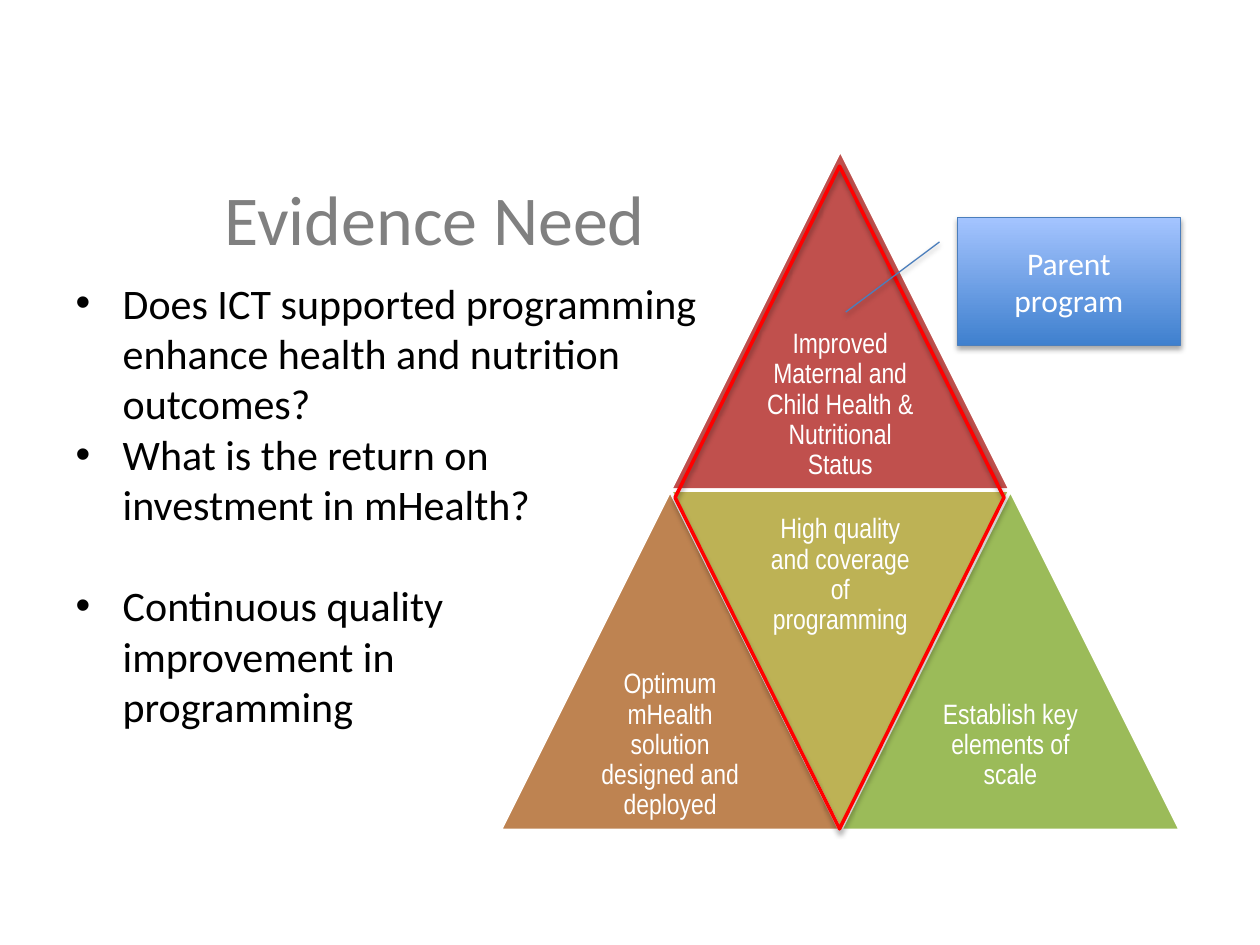
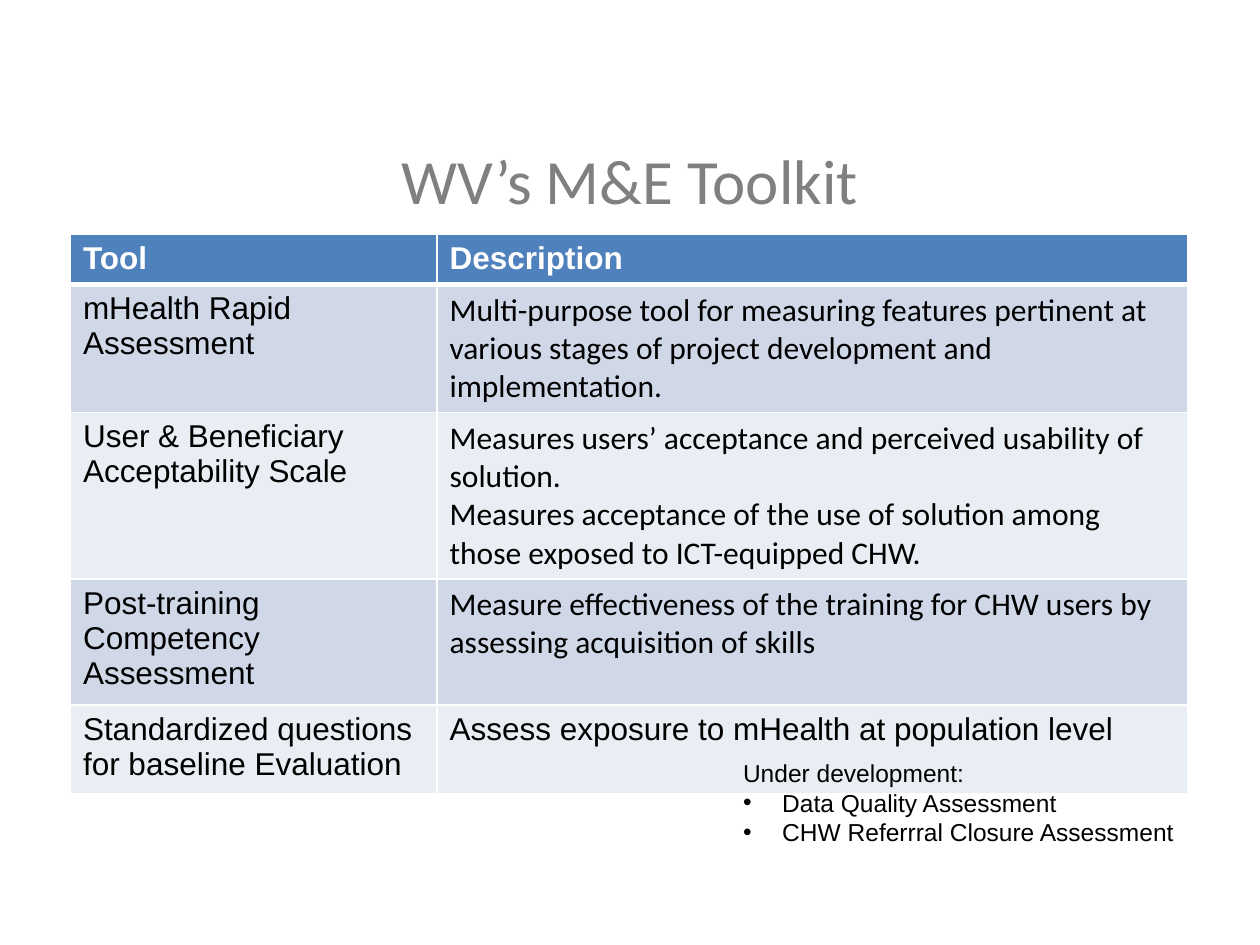
from copy import deepcopy
from dataclasses import dataclass

from pptx import Presentation
from pptx.dml.color import RGBColor
from pptx.enum.shapes import MSO_SHAPE
from pptx.enum.text import MSO_ANCHOR, MSO_AUTO_SIZE, PP_ALIGN
from pptx.oxml import parse_xml
from pptx.oxml.ns import nsdecls, qn
from pptx.util import Cm, Pt


@dataclass(frozen=True)
class Theme:
    font: str = "Calibri"
    table_font: str = "Arial"
    pyramid_font: str = "Arial Narrow"
    title: str = "808080"
    text: str = "000000"
    white: str = "FFFFFF"
    highlight: str = "FF0000"
    goal: str = "C0504D"
    solution: str = "BE8351"
    quality: str = "BDB255"
    scale: str = "9BBB59"
    callout_line: str = "4B7EBC"
    callout_bottom: str = "3F80CE"
    callout_top: str = "A4C4FF"
    header: str = "4F81BD"
    bands: tuple = ("D0D8E8", "E9EDF4")
    list_size: int = 24
    table_size: int = 18
    pyramid_size: int = 16
    note_size: int = 14


THEME = Theme()


def color(value):
    return RGBColor.from_string(value)


def place(shape, left, top, width, height):
    shape.left, shape.top = Cm(left), Cm(top)
    shape.width, shape.height = Cm(width), Cm(height)


def add_bullet(para, indent):
    properties = para._p.get_or_add_pPr()
    properties.set("marL", str(Cm(indent)))
    properties.set("indent", str(-Cm(indent)))
    properties.append(parse_xml(f'<a:buFont {nsdecls("a")} typeface="Arial"/>'))
    properties.append(parse_xml(f'<a:buChar {nsdecls("a")} char="•"/>'))


def write(para, text, size, font=THEME.font, fill=THEME.text, bold=False,
          align=PP_ALIGN.LEFT, bullet=None, line_spacing=None, before=0):
    """Fill a paragraph; line breaks take the same format as the text."""
    para.text = text
    para.alignment = align
    para.space_before = Pt(before)
    if line_spacing:
        para.line_spacing = line_spacing
    if bullet:
        add_bullet(para, bullet)
    for span in para.runs:
        span.font.name = font
        span.font.size = Pt(size)
        span.font.bold = bold
        span.font.color.rgb = color(fill)
    for line_break in para._p.findall(qn("a:br")):
        line_break.append(deepcopy(para.runs[0]._r.find(qn("a:rPr"))))


def next_paragraph(frame, index):
    return frame.paragraphs[0] if index == 0 else frame.add_paragraph()


def add_page(deck, layout_index, title, size, bounds):
    page = deck.slides.add_slide(deck.slide_layouts[layout_index])
    box = page.shapes.title
    place(box, *bounds)
    box.text_frame.auto_size = MSO_AUTO_SIZE.NONE
    write(box.text_frame.paragraphs[0], title, size, fill=THEME.title,
          align=PP_ALIGN.CENTER)
    return page


def add_figure(page, preset, bounds, line, line_width, fill=None):
    shape = page.shapes.add_shape(preset, 0, 0, 0, 0)
    place(shape, *bounds)
    shape.shadow.inherit = False
    shape.line.color.rgb = color(line)
    shape.line.width = Pt(line_width)
    if fill:
        shape.fill.solid()
        shape.fill.fore_color.rgb = color(fill)
    else:
        shape.fill.background()
    return shape


def add_shadow(shape):
    shape._element.spPr.find(qn("a:effectLst")).append(parse_xml(
        f'<a:outerShdw {nsdecls("a")} blurRad="{Pt(3.1)}" dist="{Pt(1.8)}" '
        'dir="5400000" rotWithShape="0"><a:srgbClr val="000000">'
        '<a:alpha val="35000"/></a:srgbClr></a:outerShdw>'))


def add_pyramid_part(page, left, top, side, fill, text, inverted=False):
    """Draw a triangle with its caption in the half next to its base."""
    triangle = add_figure(page, MSO_SHAPE.ISOSCELES_TRIANGLE,
                          (left, top, side, side), THEME.white, 2, fill)
    triangle.rotation = 180 if inverted else 0
    caption_top = top if inverted else top + side / 2
    box = page.shapes.add_textbox(Cm(left + side / 4), Cm(caption_top),
                                  Cm(side / 2), Cm(side / 2))
    frame = box.text_frame
    frame.word_wrap = True
    frame.vertical_anchor = MSO_ANCHOR.MIDDLE
    frame.margin_left = frame.margin_right = Cm(0.17)
    frame.margin_top = frame.margin_bottom = Cm(0.17)
    write(frame.paragraphs[0], text, THEME.pyramid_size, THEME.pyramid_font,
          THEME.white, align=PP_ALIGN.CENTER, line_spacing=0.9)


def add_pyramid(page, left, top, side):
    half = side / 2
    base = top + side
    add_pyramid_part(page, left + half, top, side, THEME.goal,
                     "Improved Maternal and Child Health &\nNutritional Status")
    add_pyramid_part(page, left, base, side, THEME.solution,
                     "Optimum mHealth solution designed and deployed")
    add_pyramid_part(page, left + half, base, side, THEME.quality,
                     "High quality and coverage of programming", inverted=True)
    add_pyramid_part(page, left + side, base, side, THEME.scale,
                     "Establish key elements of scale")


def add_callout(page, lines, bounds, pointer):
    callout = add_figure(page, MSO_SHAPE.LINE_CALLOUT_1, bounds,
                         THEME.callout_line, 0.75)
    for index, value in enumerate(pointer):
        callout.adjustments[index] = value
    callout.fill.gradient()
    callout.fill.gradient_angle = 90
    stops = callout.fill.gradient_stops
    for stop, position, shade in zip(
            stops, (0, 1), (THEME.callout_bottom, THEME.callout_top)):
        stop.position = position
        stop.color.rgb = color(shade)
    add_shadow(callout)
    frame = callout.text_frame
    frame.vertical_anchor = MSO_ANCHOR.MIDDLE
    for index, line in enumerate(lines):
        write(next_paragraph(frame, index), line, 18, fill=THEME.white,
              align=PP_ALIGN.CENTER)


def set_borders(cell, bottom):
    properties = cell._tc.get_or_add_tcPr()
    for side, width in (("L", 1), ("R", 1), ("T", 1), ("B", bottom)):
        properties.append(parse_xml(
            f'<a:ln{side} {nsdecls("a")} w="{Pt(width)}"><a:solidFill>'
            f'<a:srgbClr val="{THEME.white}"/></a:solidFill></a:ln{side}>'))


def add_tool_table(page, rows, left, top, widths, heights):
    """Add a table from rows of (tool, description, description font)."""
    table = page.shapes.add_table(
        len(rows), len(widths), Cm(left), Cm(top),
        Cm(sum(widths)), Cm(sum(heights))).table
    for column, width in zip(table.columns, widths):
        column.width = Cm(width)
    for index, (tool, description, font) in enumerate(rows):
        table.rows[index].height = Cm(heights[index])
        is_header = index == 0
        fill = THEME.header if is_header else THEME.bands[(index - 1) % 2]
        for cell, text, face in zip(table.rows[index].cells,
                                    (tool, description),
                                    (THEME.table_font, font)):
            set_borders(cell, bottom=3 if is_header else 1)
            cell.fill.solid()
            cell.fill.fore_color.rgb = color(fill)
            write(cell.text_frame.paragraphs[0], text, THEME.table_size, face,
                  THEME.white if is_header else THEME.text, bold=is_header)


def build_evidence_page(deck):
    page = add_page(deck, 1, "Evidence Need", 40, (1.63, 3.35, 14.27, 2.08))
    body = page.placeholders[1]
    place(body, 1.27, 5.46, 13.89, 9.5)
    frame = body.text_frame
    frame.auto_size = MSO_AUTO_SIZE.NONE
    questions = (
        ("Does ICT supported programming\nenhance health and nutrition\noutcomes?", 0),
        ("What is the return on\ninvestment in mHealth?", 0),
        ("Continuous quality\nimprovement in\nprogramming", 29),
    )
    for index, (text, before) in enumerate(questions):
        write(next_paragraph(frame, index), text, THEME.list_size,
              bullet=0.95, before=before)
    add_pyramid(page, left=10.08, top=3.02, side=6.86)
    add_shadow(add_figure(page, MSO_SHAPE.FLOWCHART_DECISION,
                          (13.61, 3.35, 6.63, 13.36), THEME.highlight, 2))
    add_callout(page, ("Parent", "program"), (19.3, 4.39, 4.5, 2.57),
                pointer=(0.19, -0.08, 0.74, -0.5))


def build_toolkit_page(deck):
    page = add_page(deck, 5, "WV’s M&E Toolkit", 36, (0, 2.57, 25.4, 2.08))
    rows = (
        ("Tool", "Description", THEME.table_font),
        ("mHealth Rapid Assessment",
         "Multi-purpose tool for measuring features pertinent at various "
         "stages of project development and implementation.", THEME.font),
        ("User & Beneficiary Acceptability Scale",
         "Measures users’ acceptance and perceived usability of solution.\n"
         "Measures acceptance of the use of solution among those exposed to "
         "ICT-equipped CHW.", THEME.font),
        ("Post-training Competency Assessment",
         "Measure effectiveness of the training for CHW users by assessing "
         "acquisition of skills", THEME.font),
        ("Standardized questions for baseline Evaluation",
         "Assess exposure to mHealth at population level", THEME.table_font),
    )
    add_tool_table(page, rows, 1.42, 4.72, widths=(7.39, 15.14),
                   heights=(1.02, 2.54, 3.3, 2.54, 1.78))
    note = page.shapes.add_textbox(Cm(14.73), Cm(15.16), Cm(9.25), Cm(2.06))
    note.text_frame.word_wrap = False
    lines = ("Under development:", "Data Quality Assessment",
             "CHW Referrral Closure Assessment")
    for index, line in enumerate(lines):
        write(next_paragraph(note.text_frame, index), line, THEME.note_size,
              THEME.table_font, bullet=0.79 if index else None)


def main():
    deck = Presentation()
    deck.slide_width, deck.slide_height = Cm(25.4), Cm(19.05)
    build_evidence_page(deck)
    build_toolkit_page(deck)
    deck.save("out.pptx")


if __name__ == "__main__":
    main()
